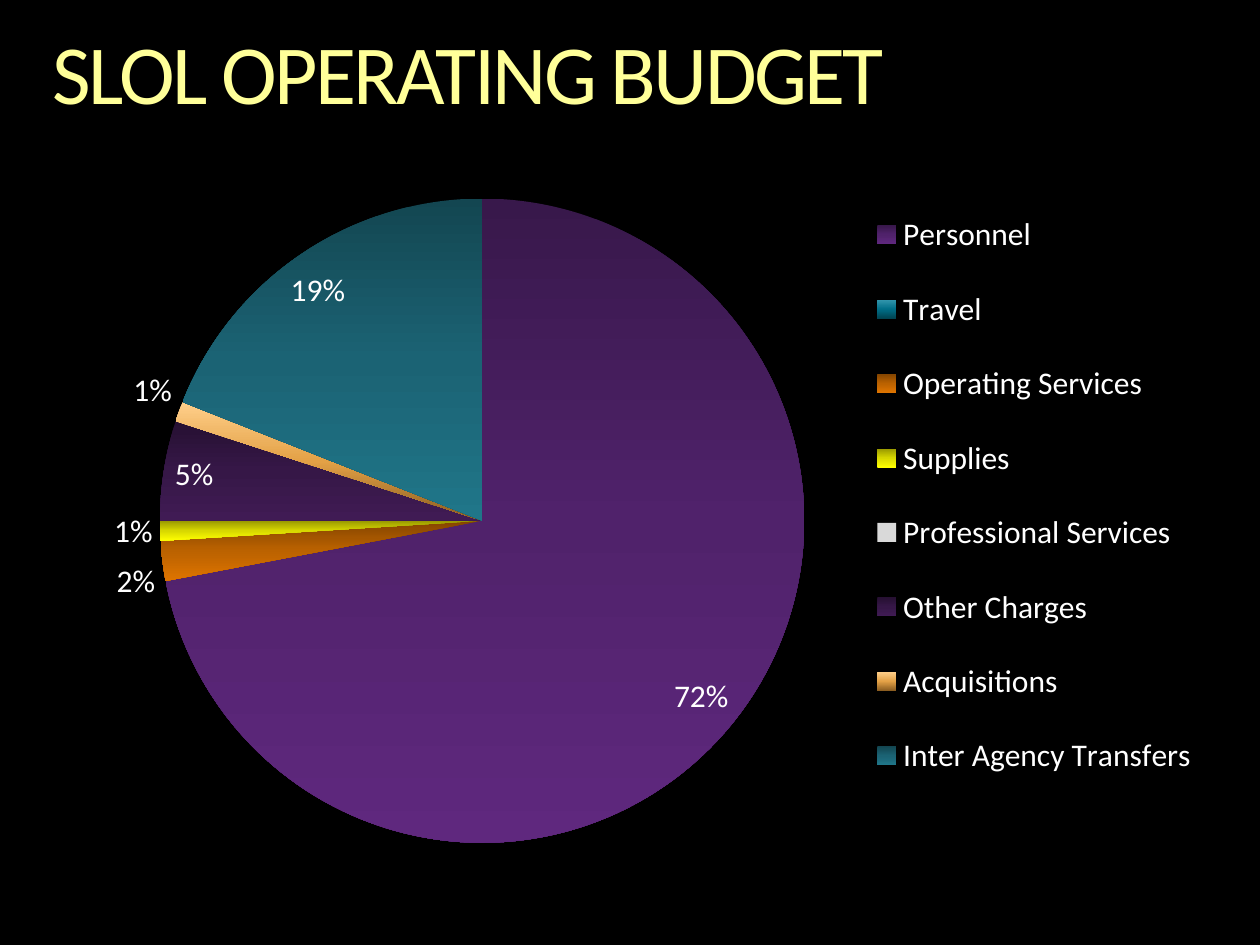
from copy import deepcopy

from lxml.etree import SubElement
from pptx import Presentation
from pptx.chart.data import CategoryChartData
from pptx.dml.color import RGBColor
from pptx.enum.chart import XL_CHART_TYPE as ChartType
from pptx.enum.chart import XL_LABEL_POSITION as LabelPosition
from pptx.enum.chart import XL_LEGEND_POSITION as LegendPosition
from pptx.enum.text import MSO_ANCHOR as Anchor
from pptx.oxml.ns import qn
from pptx.util import Cm, Pt

FONT = "Calibri"
COLORS = {"background": "000000", "text": "FFFFFF", "Professional Services": "D9D9D9"}
# Each gradient runs from top to bottom through three (position, colour) stops.
GRADIENTS = {
    "title": [(0, "FFFFB9"), (0.36, "FFFF99"), (0.86, "F6AE1E")],
    "Personnel": [(0, "38184B"), (0.5, "50226B"), (1, "5F287E")],
    "Travel": [(0, "3497AE"), (0.5, "006F88"), (1, "004452")],
    "Operating Services": [(0, "844500"), (0.5, "BB6200"), (1, "DE7400")],
    "Supplies": [(0, "979700"), (0.5, "D7D700"), (1, "FFFF00")],
    "Other Charges": [(0, "261032"), (0.5, "361747"), (1, "401B54")],
    "Acquisitions": [(0, "FFCF8A"), (0.5, "E3A146"), (1, "8A5C20")],
    "Inter Agency Transfers": [(0, "134651"), (0.5, "1B6374"), (1, "207689")],
}
BUDGET = {
    "Personnel": 72,
    "Travel": 0,
    "Operating Services": 2,
    "Supplies": 1,
    "Professional Services": 0,
    "Other Charges": 5,
    "Acquisitions": 1,
    "Inter Agency Transfers": 19,
}


def paint(fill, name):
    """Fill with the named gradient, or else the named plain colour."""
    if name not in GRADIENTS:
        fill.solid()
        fill.fore_color.rgb = RGBColor.from_string(COLORS[name])
        return
    fill.gradient()
    fill.gradient_angle = 270
    first = fill.gradient_stops[0]._gs
    first.addnext(deepcopy(first))
    for stop, (position, color) in zip(fill.gradient_stops, GRADIENTS[name]):
        stop.position = position
        stop.color.rgb = RGBColor.from_string(color)


def set_layout(element, inner=False, **fractions):
    """Place a chart part by fractions of the chart's width and height."""
    layout = element.get_or_add_layout() if hasattr(element, "get_or_add_layout") else None
    if layout is None:
        layout = element.find(qn("c:layout"))
    if layout is None:
        layout = SubElement(element, qn("c:layout"))
        element.insert(0, layout)
    manual = SubElement(layout, qn("c:manualLayout"))
    if inner:
        SubElement(manual, qn("c:layoutTarget")).set("val", "inner")
    for mode in ("xMode", "yMode"):
        SubElement(manual, qn(f"c:{mode}")).set("val", "edge")
    for side, fraction in fractions.items():
        SubElement(manual, qn(f"c:{side}")).set("val", str(fraction))


def add_title(page, left, top, width, height):
    box = page.shapes.add_textbox(left, top, width, height)
    frame_format = {
        "word_wrap": True,
        "vertical_anchor": Anchor.TOP,
        "margin_left": 0,
        "margin_top": 0,
        "margin_right": 0,
        "margin_bottom": 0,
    }
    for name, value in frame_format.items():
        setattr(box.text_frame, name, value)
    para = box.text_frame.paragraphs[0]
    para.line_spacing = 0.9
    span = para.add_run()
    span.text = "SLOL OPERATING BUDGET"
    span.font.size = Pt(48)
    span.font.name = FONT
    paint(span.font.fill, "title")
    span.font._element.set("spc", "-150")


def add_budget_pie(page, left, top, width, height):
    data = CategoryChartData()
    data.categories = list(BUDGET)
    data.add_series("Series 1", list(BUDGET.values()))
    chart = page.shapes.add_chart(ChartType.PIE, left, top, width, height, data).chart
    chart.has_title = False
    chart.font.name = FONT
    chart.font.size = Pt(18)
    chart.font.color.rgb = RGBColor.from_string(COLORS["text"])

    plot = chart.plots[0]
    plot.vary_by_categories = True
    for index, name in enumerate(BUDGET):
        paint(plot.series[0].points[index].format.fill, name)
    plot.has_data_labels = True
    label_format = {
        "show_percentage": True,
        "show_value": False,
        "number_format": "0%",
        "number_format_is_linked": False,
        "position": LabelPosition.BEST_FIT,
    }
    for name, value in label_format.items():
        setattr(plot.data_labels, name, value)
    plot_area = chart._chartSpace.find(f".//{qn('c:plotArea')}")
    set_layout(plot_area, inner=True, x=0.02, y=0.087, w=0.704, h=0.902)

    chart.has_legend = True
    chart.legend.position = LegendPosition.RIGHT
    chart.legend.include_in_layout = False
    legend = chart.legend._element
    if legend.find(qn("c:layout")) is None:
        legend.find(qn("c:legendPos")).addnext(
            legend.makeelement(qn("c:layout"), {})
        )
    set_layout(legend, x=0.71, y=0.06, w=0.28, h=0.885)


def main():
    deck = Presentation()
    deck.slide_width, deck.slide_height = Cm(25.4), Cm(19.05)
    page = deck.slides.add_slide(deck.slide_layouts[6])
    paint(page.background.fill, "background")
    margin = Cm(1.06)
    content_width = deck.slide_width - 2 * margin
    add_title(page, margin, Cm(0.64), content_width, Cm(1.85))
    add_budget_pie(page, margin, Cm(2.75), content_width, Cm(14.4))
    deck.save("out.pptx")


if __name__ == "__main__":
    main()
